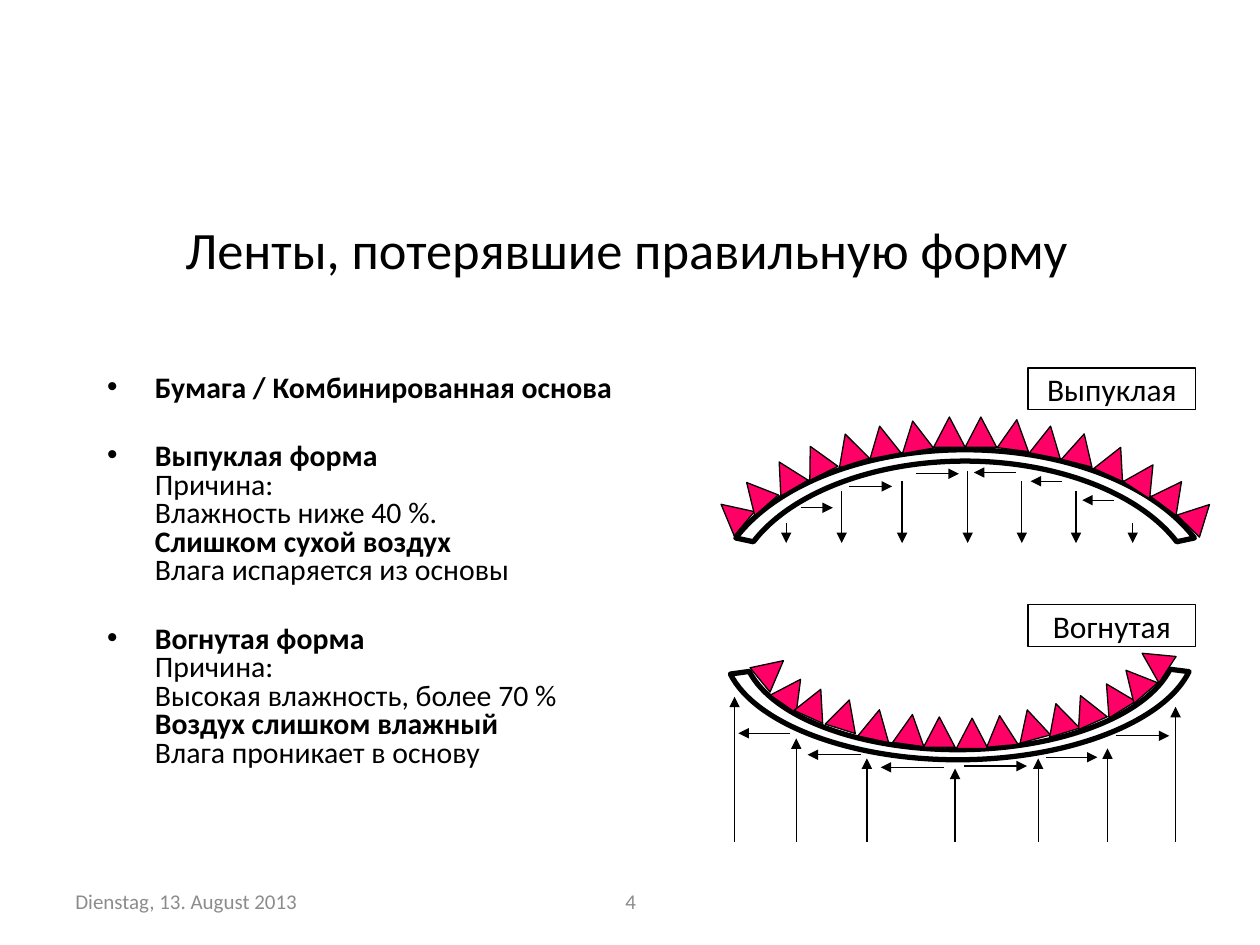
from lxml.etree import SubElement
from pptx import Presentation
from pptx.dml.color import RGBColor
from pptx.enum.shapes import MSO_CONNECTOR, MSO_SHAPE
from pptx.enum.text import MSO_ANCHOR, MSO_AUTO_SIZE, PP_ALIGN
from pptx.oxml.ns import qn
from pptx.util import Pt

PX = 9144  # EMU per px, 100 px to the inch
FONT = "Calibri"
BODY_SIZE = 17
BLACK = RGBColor(0x00, 0x00, 0x00)
WHITE = RGBColor(0xFF, 0xFF, 0xFF)
GREY = RGBColor(0x8C, 0x8C, 0x8C)
PINK = RGBColor(0xFF, 0x00, 0x66)

TITLE = "Ленты, потерявшие правильную форму"
FOOTERS = [
    ("Dienstag, 13. August 2013", (50, 695, 233, 40), PP_ALIGN.LEFT),
    ("4", (342, 695, 317, 40), PP_ALIGN.CENTER),
]
# Each bullet is a list of (line, bold)
BULLETS = [
    [("Бумага / Комбинированная основа", True)],
    [("Выпуклая форма", True),
     ("Причина:", False),
     ("Влажность ниже 40 %.", False),
     ("Слишком сухой воздух", True),
     ("Влага испаряется из основы", False)],
    [("Вогнутая форма", True),
     ("Причина:", False),
     ("Высокая влажность, более 70 %", False),
     ("Воздух слишком влажный", True),
     ("Влага проникает в основу", False)],
]

# band: box, rotation, then the inner and outer edge as one Bezier curve each,
# from the foot to the crown, in distances from the middle and top of the box
# teeth: left, top, rotation
# moisture: x, start y, tip y; stress: start x, tip x, y
CONVEX = {
    "label": ("Выпуклая", 292),
    "band": ((566, 357, 400, 237), 0,
             [(168, 73), (138, 34), (72, 9), (0, 9)],
             [(182, 70), (149, 27), (78, 0), (0, 0)]),
    "teeth": [
        (569, 396, 310), (588, 380, 318.9), (612, 365, 329.7), (636, 353, 333.3),
        (662, 344, 342.3), (688, 338, 348.9), (714, 334, 349.9), (741, 331, 0),
        (766, 331, 0), (793, 333, 7.6), (819, 338, 11), (845, 344, 14.5),
        (872, 354, 24.4), (896, 367, 33.1), (918, 380, 36.6), (939, 397, 44.6),
    ],
    "moisture": [(x, top, 431) for x, top in [
        (624, 415), (668, 390), (716, 382), (768, 374), (811, 382), (854, 390), (899, 415)]],
    "stress": [(636, 661, 403), (674, 708, 386), (727, 761, 376),
               (806, 773, 375), (843, 818, 382), (884, 859, 397)],
}
CONCAVE = {
    "label": ("Вогнутая", 480),
    "band": ((574, 423, 375, 180), 179.7,
             [(167, 71), (148, 34), (79, 8), (0, 8)],
             [(182, 69), (162, 29), (86, 0), (0, 0)]),
    "teeth": [
        (600, 520, 50.6), (616, 537, 35), (634, 546, 24.3), (658, 555, 17.4),
        (683, 563, 12), (710, 567, 7.9), (733, 569, 0), (759, 570, 0),
        (782, 568, 354.8), (806, 563, 344.6), (829, 558, 343.1), (850, 551, 335.9),
        (872, 541, 328.3), (889, 529, 319), (904, 513, 303),
    ],
    "moisture": [(x, 668, tip) for x, tip in [
        (583, 553), (632, 586), (688, 602), (758, 610), (824, 602), (879, 594), (933, 561)]],
    "stress": [(627, 586, 582), (683, 641, 599), (749, 699, 609),
               (765, 815, 608), (830, 871, 601), (886, 928, 584)],
}


def emu(*lengths):
    return [round(length * PX) for length in lengths]


def place(shape, box):
    shape.left, shape.top, shape.width, shape.height = emu(*box)


def set_font(paragraph, size, color):
    font = paragraph.font
    font.name, font.size, font.color.rgb = FONT, Pt(size), color


def paint(shape, fill, width):
    shape.shadow.inherit = False
    shape.fill.solid()
    shape.fill.fore_color.rgb = fill
    shape.line.color.rgb = BLACK
    shape.line.width = Pt(width)


def add_band(shapes, box, rotation, inner, outer):
    """Draw the bent tape as four Bezier curves within the box of its full ellipse."""
    left, top, width, height = box
    middle = width / 2
    edges = [[(middle - dx, y) for dx, y in edge]
             + [(middle + dx, y) for dx, y in reversed(edge[:-1])] for edge in (inner, outer)]
    points = [emu(*point) for point in edges[0] + edges[1][::-1]]
    builder = shapes.build_freeform(*points[0], scale=1.0)
    builder.add_line_segments(points[1:], close=True)
    band = builder.convert_to_shape()
    place(band, box)
    band.rotation = rotation
    paint(band, WHITE, 3)

    outline = band.element.find(".//" + qn("a:path"))
    for side, length in zip("wh", emu(width, height)):
        outline.set(side, str(length))
    for node, (x, y) in zip(outline.iter(qn("a:pt")), points):
        node.set("x", str(x))
        node.set("y", str(y))
    segments = outline.findall(qn("a:lnTo"))
    # Segment 6 is the straight end of the tape, between the two edges
    for first in (0, 3, 7, 10):
        group = segments[first:first + 3]
        curve = SubElement(outline, qn("a:cubicBezTo"))
        group[0].addprevious(curve)
        for segment in group:
            curve.append(segment[0])
            outline.remove(segment)


def add_arrow(shapes, *ends):
    arrow = shapes.add_connector(MSO_CONNECTOR.STRAIGHT, *emu(*ends))
    arrow.line.color.rgb = BLACK
    arrow.line.width = Pt(0.75)
    properties = arrow.element.spPr
    SubElement(properties.find(qn("a:ln")), qn("a:tailEnd"), type="triangle")
    SubElement(properties, qn("a:effectLst"))


def add_label(shapes, text, top):
    label = shapes.add_shape(MSO_SHAPE.RECTANGLE, *emu(816, top, 133, 33))
    paint(label, WHITE, 0.75)
    frame = label.text_frame
    frame.word_wrap = False
    frame.vertical_anchor = MSO_ANCHOR.MIDDLE
    frame.text = text
    frame.paragraphs[0].alignment = PP_ALIGN.CENTER
    set_font(frame.paragraphs[0], 18, BLACK)


def add_tape(shapes, tape):
    add_band(shapes, *tape["band"])
    for left, top, rotation in tape["teeth"]:
        tooth = shapes.add_shape(MSO_SHAPE.ISOSCELES_TRIANGLE, *emu(left, top, 25, 24))
        tooth.rotation = rotation
        paint(tooth, PINK, 0.75)
    for x, start, tip in tape["moisture"]:
        add_arrow(shapes, x, start, x, tip)
    for start, tip, y in tape["stress"]:
        add_arrow(shapes, start, y, tip, y)
    add_label(shapes, *tape["label"])


def fill_bullets(body):
    place(body, (75, 293, 489, 368))
    frame = body.text_frame
    frame.auto_size = MSO_AUTO_SIZE.NONE
    indent = emu(38)[0]
    for index, lines in enumerate(BULLETS):
        paragraph = frame.add_paragraph() if index else frame.paragraphs[0]
        paragraph.line_spacing = 0.8
        paragraph.space_before = Pt(22.7 if index else 0)
        set_font(paragraph, BODY_SIZE, BLACK)
        properties = paragraph._p.get_or_add_pPr()
        properties.set("marL", str(indent))
        properties.set("indent", str(-indent))
        for number, (line, bold) in enumerate(lines):
            if number:
                paragraph.add_line_break()
            run = paragraph.add_run()
            run.text = line
            run.font.bold = bold
            # The placeholder's own size would win over the paragraph's
            run.font.size = Pt(BODY_SIZE)
        for line_break in paragraph._p.findall(qn("a:br")):
            SubElement(line_break, qn("a:rPr"), sz=str(BODY_SIZE * 100))


def add_footer(shapes, text, box, alignment):
    frame = shapes.add_textbox(*emu(*box)).text_frame
    frame.word_wrap = True
    frame.vertical_anchor = MSO_ANCHOR.MIDDLE
    frame.text = text
    frame.paragraphs[0].alignment = alignment
    set_font(frame.paragraphs[0], 12, GREY)


def main():
    deck = Presentation()
    deck.slide_width, deck.slide_height = emu(1000, 750)
    slide = deck.slides.add_slide(deck.slide_layouts[1])
    title, body = slide.placeholders
    place(title, (67, 135, 861, 125))
    title.text_frame.text = TITLE
    title.text_frame.vertical_anchor = MSO_ANCHOR.MIDDLE
    title.text_frame.paragraphs[0].alignment = PP_ALIGN.CENTER
    set_font(title.text_frame.paragraphs[0], 30, BLACK)

    fill_bullets(body)
    for footer in FOOTERS:
        add_footer(slide.shapes, *footer)
    for tape in (CONCAVE, CONVEX):
        add_tape(slide.shapes, tape)
    deck.save("out.pptx")


if __name__ == "__main__":
    main()
